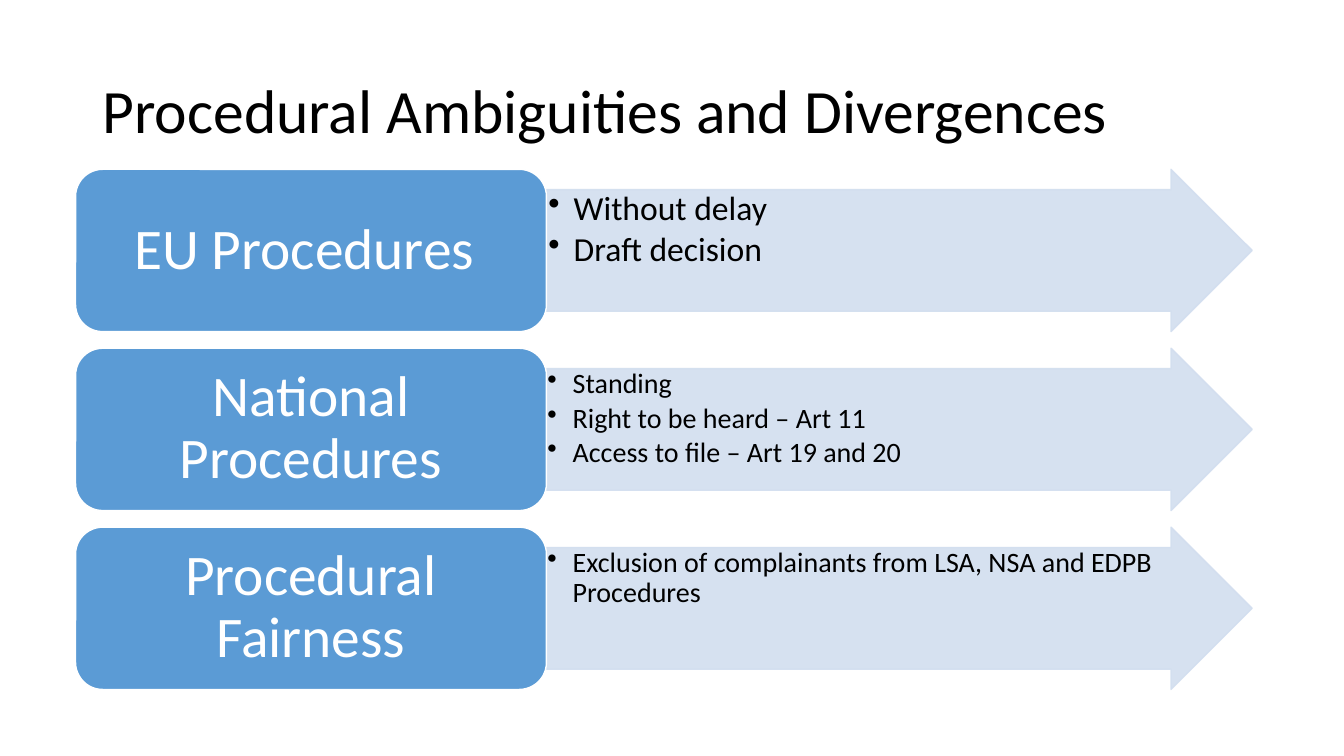
import pptx
import pptx.util
import pptx.dml.color
import pptx.enum.shapes
import pptx.enum.text
import pptx.oxml
import pptx.oxml.ns
import lxml.etree

Inches, Pt = pptx.util.Inches, pptx.util.Pt
SHAPES = pptx.enum.shapes.MSO_SHAPE
ANCHOR = pptx.enum.text.MSO_ANCHOR
ALIGN = pptx.enum.text.PP_ALIGN
qn = pptx.oxml.ns.qn


def color(hex_code):
    return pptx.dml.color.RGBColor.from_string(hex_code)


def write(shape, lines, size, ink, align, anchor, inset_x, inset_y):
    frame = shape.text_frame
    frame.word_wrap = True
    frame.vertical_anchor = anchor
    frame.margin_left = frame.margin_right = Inches(inset_x)
    frame.margin_top = frame.margin_bottom = Inches(inset_y)
    for index, line in enumerate(lines):
        para = frame.paragraphs[0] if index == 0 else frame.add_paragraph()
        para.alignment = align
        para.line_spacing = 0.9
        span = para.add_run()
        span.text = line
        span.font.name = "Calibri"
        span.font.size = Pt(size)
        span.font.color.rgb = color(ink)


deck = pptx.Presentation()
deck.slide_width, deck.slide_height = Inches(13.33), Inches(7.5)
page = deck.slides.add_slide(deck.slide_layouts[6])

# Title
title = page.shapes.add_textbox(Inches(0.92), Inches(0.4), Inches(11.5), Inches(1.45))
write(title, ["Procedural Ambiguities and Divergences"], 44, "000000",
      ALIGN.LEFT, ANCHOR.MIDDLE, 0.1, 0.05)

# Grid: one row per topic, a label column and an arrow column
left, top = 0.75, 1.68
label_width, arrow_width = 4.67, 7
row_height, row_step = 1.61, 1.775
topics = [
    ("EU Procedures ", 24, 0.02, ["Without delay", "Draft decision"]),
    ("National Procedures", 20, 0.01,
     ["Standing", "Right to be heard – Art 11", "Access to file – Art 19 and 20"]),
    ("Procedural Fairness", 20, 0.01,
     ["Exclusion of complainants from LSA, NSA and EDPB Procedures"]),
]

for row, (name, size, inset, points) in enumerate(topics):
    row_top = Inches(top + row * row_step)

    # Arrow with bulleted points
    arrow = page.shapes.add_shape(SHAPES.RIGHT_ARROW, Inches(left + label_width), row_top,
                                  Inches(arrow_width), Inches(row_height))
    arrow.adjustments[0], arrow.adjustments[1] = 0.75, 0.5
    write(arrow, points, size, "000000", ALIGN.LEFT, ANCHOR.TOP, inset, inset)
    for para in arrow.text_frame.paragraphs:
        para.space_after = Pt(3)
        properties = para._p.get_or_add_pPr()
        properties.set("marL", str(Inches(0.25)))
        properties.set("indent", str(-Inches(0.25)))
        lxml.etree.SubElement(properties, qn("a:buChar")).set("char", "•")

    # Label
    label = page.shapes.add_shape(SHAPES.ROUNDED_RECTANGLE, Inches(left), row_top,
                                  Inches(label_width), Inches(row_height))
    write(label, [name], 41, "FFFFFF", ALIGN.CENTER, ANCHOR.MIDDLE, 0.17, 0.09)

    # Fills and outlines
    for shape, fill, line in ((arrow, "D2DEEF", "D2DEEF"), (label, "5B9BD5", "FFFFFF")):
        shape.shadow.inherit = False
        shape.fill.solid()
        shape.fill.fore_color.rgb = color(fill)
        shape.line.color.rgb = color(line)
        shape.line.width = Pt(1)

    # The arrow is slightly transparent
    for tint in arrow._element.spPr.iter(qn("a:srgbClr")):
        lxml.etree.SubElement(tint, qn("a:alpha")).set("val", "90000")

deck.save("out.pptx")
